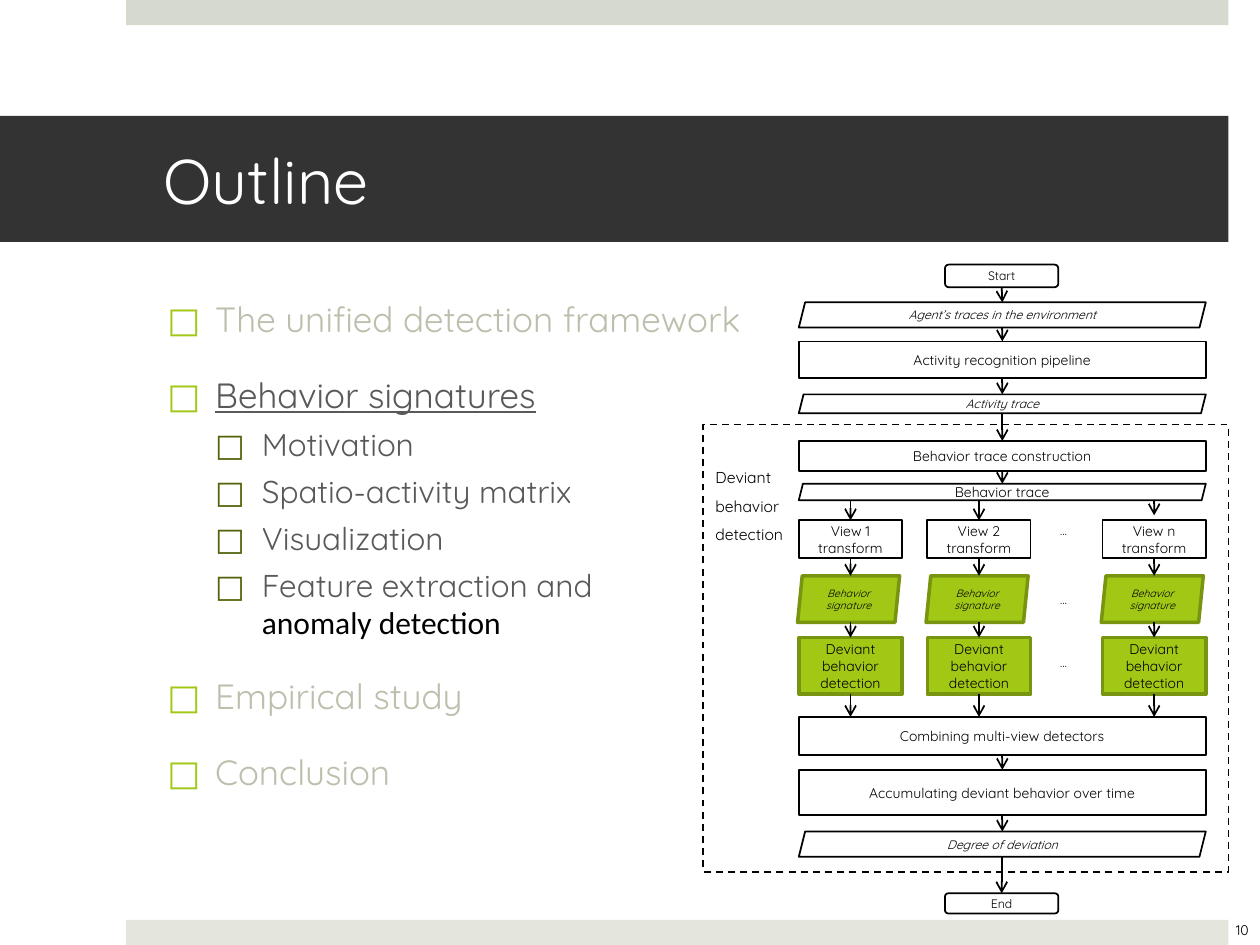
from dataclasses import dataclass
from typing import Optional

from lxml.etree import SubElement
from pptx import Presentation
from pptx.dml.color import RGBColor
from pptx.enum.dml import MSO_LINE
from pptx.enum.shapes import MSO_CONNECTOR, MSO_SHAPE
from pptx.enum.text import MSO_ANCHOR, PP_ALIGN
from pptx.oxml.ns import qn
from pptx.util import Inches, Pt

FONT = "Quicksand"
BLACK = RGBColor(0x00, 0x00, 0x00)
WHITE = RGBColor(0xFF, 0xFF, 0xFF)
DARK = RGBColor(0x33, 0x33, 0x33)
GRAY = RGBColor(0x59, 0x59, 0x59)
PALE = RGBColor(0xBB, 0xC0, 0xAC)
TOP_BAR = RGBColor(0xD6, 0xD9, 0xCD)
LOW_BAR = RGBColor(0xE4, 0xE6, 0xDE)
LIME = RGBColor(0xA2, 0xC8, 0x16)
EDGE = RGBColor(0x78, 0x94, 0x10)
OLIVE = RGBColor(0x51, 0x64, 0x0B)

RECT = MSO_SHAPE.RECTANGLE
ROUND = MSO_SHAPE.ROUNDED_RECTANGLE
SLANT = MSO_SHAPE.PARALLELOGRAM


@dataclass
class Box:
    left: float
    top: float
    width: float
    height: float
    text: str = ""
    kind: int = RECT
    size: float = 8
    italic: bool = False
    fill: Optional[RGBColor] = None
    edge: Optional[RGBColor] = BLACK
    color: RGBColor = BLACK
    weight: float = 1


@dataclass
class Item:
    text: str
    level: int = 0
    color: RGBColor = PALE
    under: bool = False


@dataclass
class View:
    left: float
    label: str
    tip: float = 4.13


def style(frame, size: float, color: RGBColor, italic: bool = False) -> None:
    for para in frame.paragraphs:
        for run in para.runs:
            font = run.font
            font.name, font.size, font.italic = FONT, Pt(size), italic
            font.color.rgb = color


def inset(frame, left: float, top: float, right: float, low: float) -> None:
    frame.margin_left, frame.margin_top = Inches(left), Inches(top)
    frame.margin_right, frame.margin_bottom = Inches(right), Inches(low)


def draw(shapes, box: Box):
    shape = shapes.add_shape(box.kind, Inches(box.left), Inches(box.top),
                             Inches(box.width), Inches(box.height))
    shape.shadow.inherit = False
    for part, color in ((shape.fill, box.fill), (shape.line.fill, box.edge)):
        if color is None:
            part.background()
        else:
            part.solid()
            part.fore_color.rgb = color
    if box.edge is not None:
        shape.line.width = Pt(box.weight)
    frame = shape.text_frame
    frame.word_wrap = True
    frame.vertical_anchor = MSO_ANCHOR.MIDDLE
    inset(frame, 0.05, 0, 0.05, 0)
    if box.text:
        frame.text = box.text
        for para in frame.paragraphs:
            para.alignment = PP_ALIGN.CENTER
        style(frame, box.size, box.color, box.italic)
    return shape


def note(shapes, left: float, top: float, width: float, height: float,
         text: str, size: float) -> None:
    frame = shapes.add_textbox(Inches(left), Inches(top), Inches(width),
                               Inches(height)).text_frame
    frame.text = text
    frame.word_wrap = True
    frame.vertical_anchor = MSO_ANCHOR.MIDDLE
    inset(frame, 0, 0, 0, 0)
    frame.paragraphs[0].alignment = PP_ALIGN.CENTER
    style(frame, size, BLACK)


def arrow(shapes, x: float, start: float, stop: float,
          source=None, target=None) -> None:
    line = shapes.add_connector(MSO_CONNECTOR.STRAIGHT, Inches(x),
                                Inches(start), Inches(x), Inches(stop))
    # Slanted boxes have other joining points, so only upright ones are joined
    if source is not None and source.auto_shape_type != SLANT:
        line.begin_connect(source, 2)
    if target is not None and target.auto_shape_type != SLANT:
        line.end_connect(target, 0)
    line.line.color.rgb = BLACK
    line.line.width = Pt(1)
    props = line.line._get_or_add_ln()
    SubElement(props, qn("a:tailEnd"), type="arrow")
    SubElement(line._element.spPr, qn("a:effectLst"))


def outline(shapes, items: list[Item]) -> None:
    frame = shapes.add_textbox(Inches(1.23), Inches(2.33), Inches(8.32),
                               Inches(4.57)).text_frame
    frame.word_wrap = True
    for index, item in enumerate(items):
        para = frame.add_paragraph() if index else frame.paragraphs[0]
        para.text = item.text
        para.level = item.level
        para.line_spacing = 0.97
        gap = 6 if item.level else 20
        para.space_before = Pt(gap if index else 0)
        font = para.runs[0].font
        font.name, font.size = FONT, Pt(18 if item.level else 20)
        font.color.rgb = item.color
        font.underline = item.under
        props = para._p.get_or_add_pPr()
        props.set("marL", str(Inches(0.75 if item.level else 0.38)))
        props.set("indent", str(-Inches(0.37 if item.level else 0.38)))
        tint = SubElement(props, qn("a:buClr"))
        SubElement(tint, qn("a:srgbClr"), val=str(OLIVE if item.level else LIME))
        SubElement(props, qn("a:buFont"), typeface=FONT)
        SubElement(props, qn("a:buChar"), char="□")


def chain(shapes, boxes: list[Box]) -> None:
    """Draw boxes from top to bottom with an arrow between neighbours."""
    last = past = None
    for box in boxes:
        shape = draw(shapes, box)
        if past is not None:
            arrow(shapes, box.left + box.width / 2, past.top + past.height,
                  box.top, last, shape)
        last, past = shape, box


def wide(top: float, height: float, text: str, **more) -> Box:
    return Box(6.34, top, 3.23, height, text, **more)


def data(top: float, height: float, text: str) -> Box:
    return wide(top, height, text, kind=SLANT, size=7, italic=True)


def cap(top: float, height: float, text: str) -> Box:
    return Box(7.5, top, 0.9, height, text, ROUND, 7)


def column(shapes, view: View) -> None:
    mid = view.left + 0.41
    green = {"fill": LIME, "edge": EDGE, "weight": 2}
    first = draw(shapes, Box(view.left, 4.13, 0.82, 0.3, view.label))
    sign = draw(shapes, Box(view.left - 0.01, 4.57, 0.81, 0.37,
                            "Behavior signature", SLANT, 6, True, **green))
    sign.adjustments[0] = 0.1
    last = draw(shapes, Box(view.left, 5.06, 0.82, 0.45,
                            "Deviant behavior detection", **green))
    arrow(shapes, mid, 3.97, view.tip,
          target=first if view.tip == 4.13 else None)
    arrow(shapes, mid, 4.43, 4.57, first)
    arrow(shapes, mid, 4.94, 5.06, target=last)
    arrow(shapes, mid, 5.51, 5.69, last)


def main() -> None:
    deck = Presentation()
    deck.slide_width, deck.slide_height = Inches(10), Inches(7.5)
    shapes = deck.slides.add_slide(deck.slide_layouts[6]).shapes

    # Bars, title and page number
    draw(shapes, Box(1, 0, 8.75, 0.2, fill=TOP_BAR, edge=None))
    draw(shapes, Box(1, 7.3, 8.75, 0.2, fill=LOW_BAR, edge=None))
    title = draw(shapes, Box(0, 0.92, 9.75, 1, "Outline", size=36, fill=DARK,
                             edge=None, color=WHITE)).text_frame
    inset(title, 1.3, 0.05, 0.3, 0.05)
    title.paragraphs[0].alignment = PP_ALIGN.LEFT
    note(shapes, 9.61, 7.18, 0.5, 0.4, "10", 8)

    # Outline
    outline(shapes, [
        Item("The unified detection framework"),
        Item("Behavior signatures", 0, GRAY, True),
        Item("Motivation", 1, GRAY),
        Item("Spatio-activity matrix", 1, GRAY),
        Item("Visualization", 1, GRAY),
        Item("Feature extraction and\vanomaly detection", 1, GRAY),
        Item("Empirical study"),
        Item("Conclusion"),
    ])

    # Dashed frame
    area = draw(shapes, Box(5.58, 3.37, 4.17, 3.55,
                            "Deviant\nbehavior\ndetection", size=9))
    area.line.dash_style = MSO_LINE.DASH
    frame = area.text_frame
    frame.vertical_anchor = MSO_ANCHOR.TOP
    inset(frame, 0.1, 0.27, 0.1, 0.05)
    for para in frame.paragraphs:
        para.alignment = PP_ALIGN.LEFT
        para.line_spacing = 1.5

    # Flow before and after the views
    chain(shapes, [
        cap(2.1, 0.18, "Start"),
        data(2.4, 0.2, "Agent’s traces in the environment"),
        wide(2.71, 0.29, "Activity recognition pipeline"),
        data(3.13, 0.15, "Activity trace"),
        wide(3.5, 0.24, "Behavior trace construction"),
        wide(3.84, 0.13, "Behavior trace", kind=SLANT),
    ])
    chain(shapes, [
        wide(5.69, 0.3, "Combining multi-view detectors"),
        wide(6.11, 0.36, "Accumulating deviant behavior over time"),
        data(6.6, 0.2, "Degree of deviation"),
        cap(7.09, 0.16, "End"),
    ])

    # Views
    for view in (View(6.34, "View 1\ntransform"), View(7.36, "View 2\ntransform"),
                 View(8.75, "View n transform", 4.09)):
        column(shapes, view)
    for top in (4.16, 4.7, 5.2):
        note(shapes, 8.3, top, 0.28, 0.11, "…", 7)

    deck.save("out.pptx")


if __name__ == "__main__":
    main()
